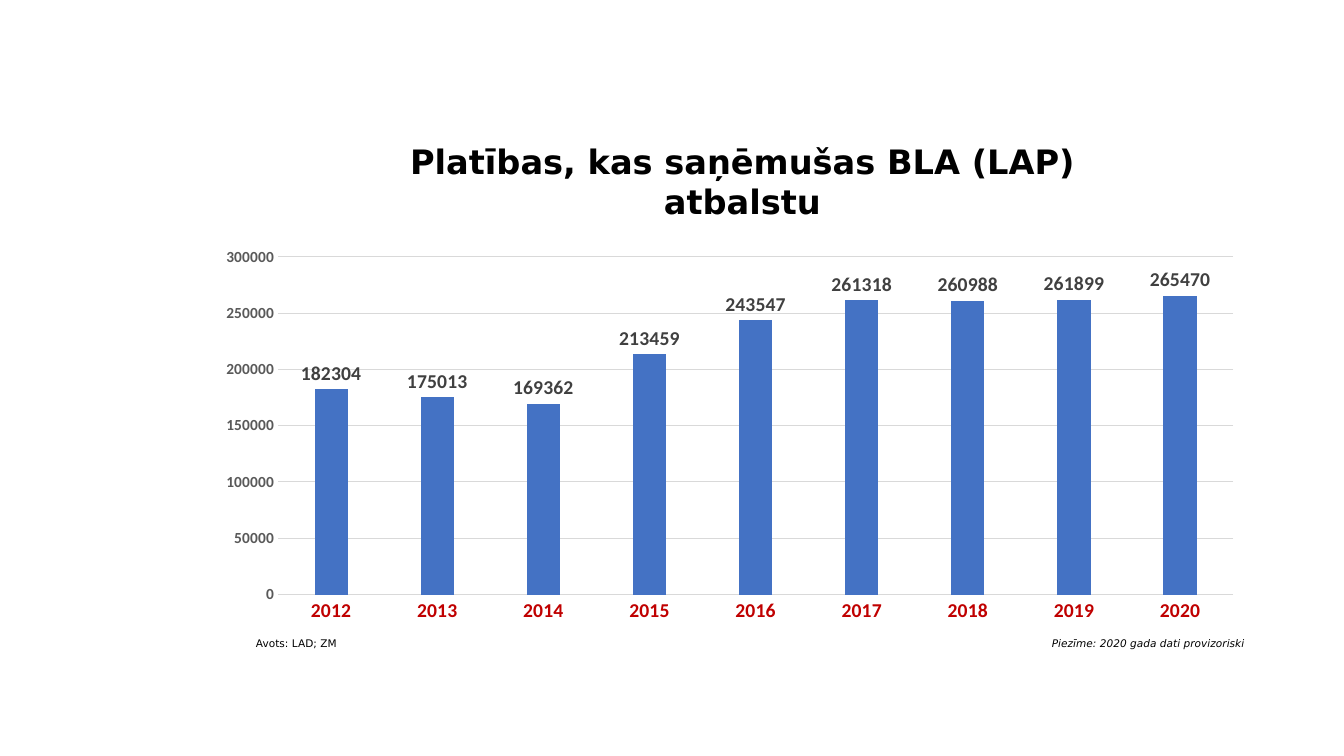
from lxml import etree
from pptx import Presentation
from pptx.chart.data import CategoryChartData
from pptx.dml.color import RGBColor
from pptx.enum.chart import XL_CHART_TYPE as ChartType, XL_LABEL_POSITION as LabelPos, XL_TICK_MARK as Tick
from pptx.enum.text import PP_ALIGN as Align
from pptx.oxml import parse_xml
from pptx.oxml.ns import nsdecls
from pptx.util import Inches, Pt

HEADING = "Platības, kas saņēmušas BLA (LAP) atbalstu"
AREAS = {
    "2012": 182304, "2013": 175013, "2014": 169362,
    "2015": 213459, "2016": 243547, "2017": 261318,
    "2018": 260988, "2019": 261899, "2020": 265470,
}
FOOTNOTES = [
    ("Avots: LAD; ZM", 2.44, 2.89, Align.LEFT, False),
    ("Piezīme: 2020 gada dati provizoriski", 7.11, 5.33, Align.RIGHT, True),
]
CHART_BOX = (2.03, 1.22, 10.41, 5.07)
HEADING_SPOT = {"xMode": "edge", "yMode": "edge", "x": 0.19, "y": 0.02}
PLOT_SPOT = {"layoutTarget": "inner", "xMode": "edge", "yMode": "edge",
             "x": 0.07, "y": 0.262, "w": 0.91, "h": 0.661}
SANS, LABEL_FACE = "DejaVu Sans", "Calibri"


def color(value):
    return RGBColor.from_string(value)


def style(font, size, tint, face, bold=False, italic=False):
    font.size, font.name = Pt(size), face
    font.bold, font.italic = bold, italic
    font.color.rgb = color(tint)


def rule(line):
    line.color.rgb = color("D9D9D9")
    line.width = Pt(0.75)


def manual_layout(spot):
    entries = "".join(f'<c:{key} val="{value}"/>' for key, value in spot.items())
    return parse_xml(f'<c:layout {nsdecls("c")}><c:manualLayout>{entries}</c:manualLayout></c:layout>')


def place(parent, spot, after=None):
    for old in parent.findall(etree.QName(parent).namespace.join("{}") + "layout"):
        parent.remove(old)
    if after is None:
        parent.insert(0, manual_layout(spot))
    else:
        after.addnext(manual_layout(spot))


deck = Presentation()
deck.slide_width, deck.slide_height = Inches(13.33), Inches(7.5)
slide = deck.slides.add_slide(deck.slide_layouts[6])

for wording, left, width, align, italic in FOOTNOTES:
    note = slide.shapes.add_textbox(Inches(left), Inches(6.28), Inches(width), Inches(0.33))
    note.text_frame.word_wrap = True
    line = note.text_frame.paragraphs[0]
    line.alignment, line.line_spacing, line.space_before = align, 0.9, Pt(10)
    run = line.add_run()
    run.text = wording
    style(run.font, 7.5, "000000", SANS, italic=italic)

areas_data = CategoryChartData()
areas_data.categories = list(AREAS)
areas_data.add_series("Series 1", list(AREAS.values()))
chart = slide.shapes.add_chart(
    ChartType.COLUMN_CLUSTERED, *map(Inches, CHART_BOX), areas_data).chart
style(chart.font, 10, "000000", LABEL_FACE)
chart.has_legend = False

heading = chart.chart_title
heading_run = heading.text_frame.paragraphs[0].add_run()
heading_run.text = HEADING
style(heading_run.font, 24, "000000", SANS, bold=True)
heading.include_in_layout = False
title_xml = chart.element.chart.find(f'{{{etree.QName(chart.element).namespace}}}title')
place(title_xml, HEADING_SPOT, after=title_xml[0])
place(chart.element.chart.plotArea, PLOT_SPOT)

years = chart.category_axis
years.major_tick_mark = years.minor_tick_mark = Tick.NONE
years.has_major_gridlines = False
style(years.tick_labels.font, 14, "C00000", LABEL_FACE, bold=True)
rule(years.format.line)

scale = chart.value_axis
scale.major_tick_mark = scale.minor_tick_mark = Tick.NONE
scale.minimum_scale, scale.maximum_scale, scale.major_unit = 0, 300000, 50000
style(scale.tick_labels.font, 11, "595959", LABEL_FACE, bold=True)
scale.format.line.fill.background()
rule(scale.major_gridlines.format.line)

columns = chart.plots[0]
columns.gap_width, columns.overlap, columns.vary_by_categories = 219, -27, False
bars = columns.series[0]
bars.format.fill.solid()
bars.format.fill.fore_color.rgb = color("4472C4")
values = bars.data_labels
values.show_value, values.position = True, LabelPos.OUTSIDE_END
style(values.font, 14, "404040", LABEL_FACE, bold=True)

deck.save("out.pptx")
